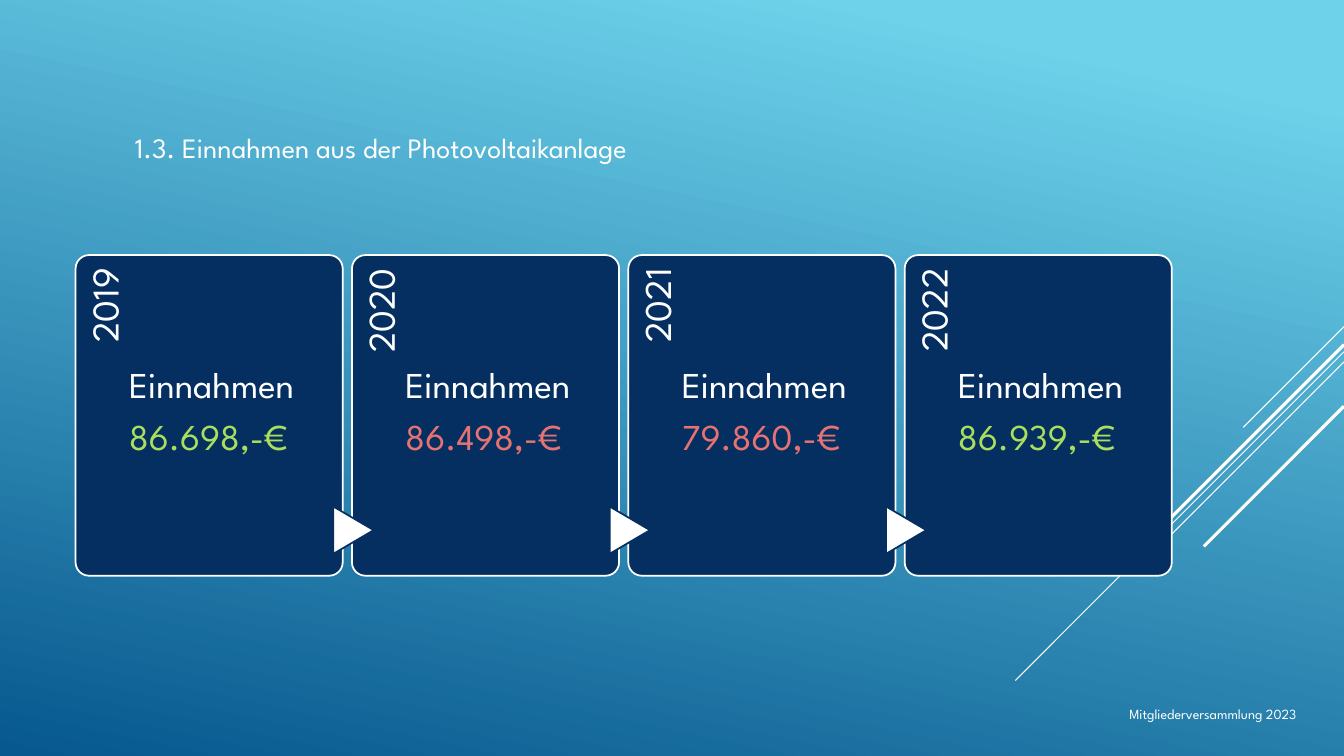
from dataclasses import dataclass

from lxml import etree
from pptx import Presentation
from pptx.dml.color import RGBColor
from pptx.enum.shapes import MSO_CONNECTOR, MSO_SHAPE
from pptx.enum.text import MSO_ANCHOR, MSO_AUTO_SIZE, PP_ALIGN
from pptx.oxml.ns import qn
from pptx.shapes.autoshape import Shape
from pptx.slide import Slide
from pptx.util import Pt

STRAIGHT = MSO_CONNECTOR.STRAIGHT
ROUNDED_RECTANGLE = MSO_SHAPE.ROUNDED_RECTANGLE
TRIANGLE = MSO_SHAPE.FLOWCHART_EXTRACT
TOP, MIDDLE = MSO_ANCHOR.TOP, MSO_ANCHOR.MIDDLE
LEFT, RIGHT = PP_ALIGN.LEFT, PP_ALIGN.RIGHT
NO_AUTOFIT = MSO_AUTO_SIZE.NONE

FONT = "League Spartan"
COLORS = {
    "sky": "6ED2EB",
    "ocean": "06588E",
    "navy": "052F61",
    "white": "FFFFFF",
    "gain": "AADF5E",
    "loss": "E67272",
}

SLIDE_WIDTH, SLIDE_HEIGHT = 960, 540
CARD_LEFT, CARD_TOP = 54, 182.2
CARD_WIDTH, CARD_HEIGHT = 190.8, 229
CARD_PITCH = 197.4
YEAR_WIDTH, YEAR_HEIGHT = 188, 38
YEAR_CENTER_X, YEAR_CENTER_Y = 19.1, 276.1
ARROW_WIDTH, ARROW_HEIGHT = 33.8, 28.8
ARROW_OFFSET, ARROW_TOP = -15.8, 364.3


@dataclass
class YearCard:
    year: str
    income: str
    color: str


@dataclass
class DiagonalLine:
    top: float
    run: float
    weight: float


CARDS = [
    YearCard("2019", "86.698,-€", "gain"),
    YearCard("2020", "86.498,-€", "loss"),
    YearCard("2021", "79.860,-€", "loss"),
    YearCard("2022", "86.939,-€", "gain"),
]

DIAGONAL_LINES = [
    DiagonalLine(233.3, 72, 0.75),
    DiagonalLine(251.3, 234.7, 0.75),
    DiagonalLine(258.5, 149.3, 0.75),
    DiagonalLine(246.2, 137.5, 2.25),
    DiagonalLine(290.2, 100.1, 2.25),
]


def rgb(name: str) -> RGBColor:
    return RGBColor.from_string(COLORS[name])


def write_text(shape: Shape, lines: list[tuple[str, str]], *, size: float,
               align: PP_ALIGN = LEFT, anchor: MSO_ANCHOR = TOP,
               margins: tuple[float, float, float, float] = (0, 0, 0, 0),
               line_spacing: float = 1.0, space_after: float = 0) -> None:
    frame = shape.text_frame
    frame.word_wrap = True
    frame.auto_size = NO_AUTOFIT
    frame.vertical_anchor = anchor
    (frame.margin_left, frame.margin_top,
     frame.margin_right, frame.margin_bottom) = [Pt(margin) for margin in margins]
    for index, (text, color) in enumerate(lines):
        paragraph = frame.add_paragraph() if index else frame.paragraphs[0]
        paragraph.alignment = align
        paragraph.line_spacing = line_spacing
        paragraph.space_after = Pt(space_after)
        run = paragraph.add_run()
        run.text = text
        run.font.name = FONT
        run.font.size = Pt(size)
        run.font.color.rgb = rgb(color)


def add_text_box(slide: Slide, left: float, top: float, width: float,
                 height: float) -> Shape:
    return slide.shapes.add_textbox(Pt(left), Pt(top), Pt(width), Pt(height))


def add_filled_shape(slide: Slide, kind: MSO_SHAPE, left: float, top: float,
                     width: float, height: float, fill: str, line: str) -> Shape:
    shape = slide.shapes.add_shape(kind, Pt(left), Pt(top), Pt(width), Pt(height))
    shape.shadow.inherit = False
    shape.fill.solid()
    shape.fill.fore_color.rgb = rgb(fill)
    shape.line.color.rgb = rgb(line)
    shape.line.width = Pt(1.25)
    return shape


def paint_background(slide: Slide) -> None:
    fill = slide.background.fill
    fill.gradient()
    fill.gradient_angle = 258
    for stop, position, color in zip(fill.gradient_stops, (0.1, 1), ("sky", "ocean")):
        stop.position = position
        stop.color.rgb = rgb(color)


def add_diagonal_line(slide: Slide, line: DiagonalLine) -> None:
    connector = slide.shapes.add_connector(
        STRAIGHT, Pt(SLIDE_WIDTH), Pt(line.top),
        Pt(SLIDE_WIDTH - line.run), Pt(line.top + line.run))
    connector.line.color.rgb = rgb("white")
    connector.line.width = Pt(line.weight)
    etree.SubElement(connector._element.spPr, qn("a:effectLst"))


def add_title(slide: Slide) -> None:
    title = slide.shapes.title
    title.left, title.top, title.width, title.height = Pt(96.4), Pt(91), Pt(600), Pt(28)
    write_text(title, [("1.3. Einnahmen aus der Photovoltaikanlage", "white")],
               size=20, anchor=MIDDLE)


def add_year_card(slide: Slide, card: YearCard, index: int) -> None:
    left = CARD_LEFT + index * CARD_PITCH
    panel = add_filled_shape(slide, ROUNDED_RECTANGLE, left, CARD_TOP,
                             CARD_WIDTH, CARD_HEIGHT, "navy", "white")
    panel.adjustments[0] = 0.05

    year = add_text_box(slide, left + YEAR_CENTER_X - YEAR_WIDTH / 2,
                        YEAR_CENTER_Y - YEAR_HEIGHT / 2, YEAR_WIDTH, YEAR_HEIGHT)
    year.rotation = 270
    write_text(year, [(card.year, "white")], size=27, align=RIGHT,
               margins=(0, 7.2, 9.4, 0), line_spacing=0.9)

    if index:
        arrow = add_filled_shape(slide, TRIANGLE, left + ARROW_OFFSET, ARROW_TOP,
                                 ARROW_WIDTH, ARROW_HEIGHT, "white", "navy")
        arrow.rotation = 90

    income = add_text_box(slide, left + 38.2, 262.2, 142, 80)
    write_text(income, [("Einnahmen", "white"), (card.income, card.color)],
               size=26, line_spacing=0.9, space_after=9.1)


def main() -> None:
    presentation = Presentation()
    presentation.slide_width = Pt(SLIDE_WIDTH)
    presentation.slide_height = Pt(SLIDE_HEIGHT)
    slide = presentation.slides.add_slide(presentation.slide_layouts[5])
    paint_background(slide)
    for line in DIAGONAL_LINES:
        add_diagonal_line(slide, line)
    add_title(slide)
    for index, card in enumerate(CARDS):
        add_year_card(slide, card, index)
    footer = add_text_box(slide, 339, 500.4, 594, 28.8)
    write_text(footer, [("Mitgliederversammlung 2023", "white")], size=10,
               align=RIGHT, margins=(7.2, 3.6, 7.2, 3.6))
    presentation.save("out.pptx")


if __name__ == "__main__":
    main()
